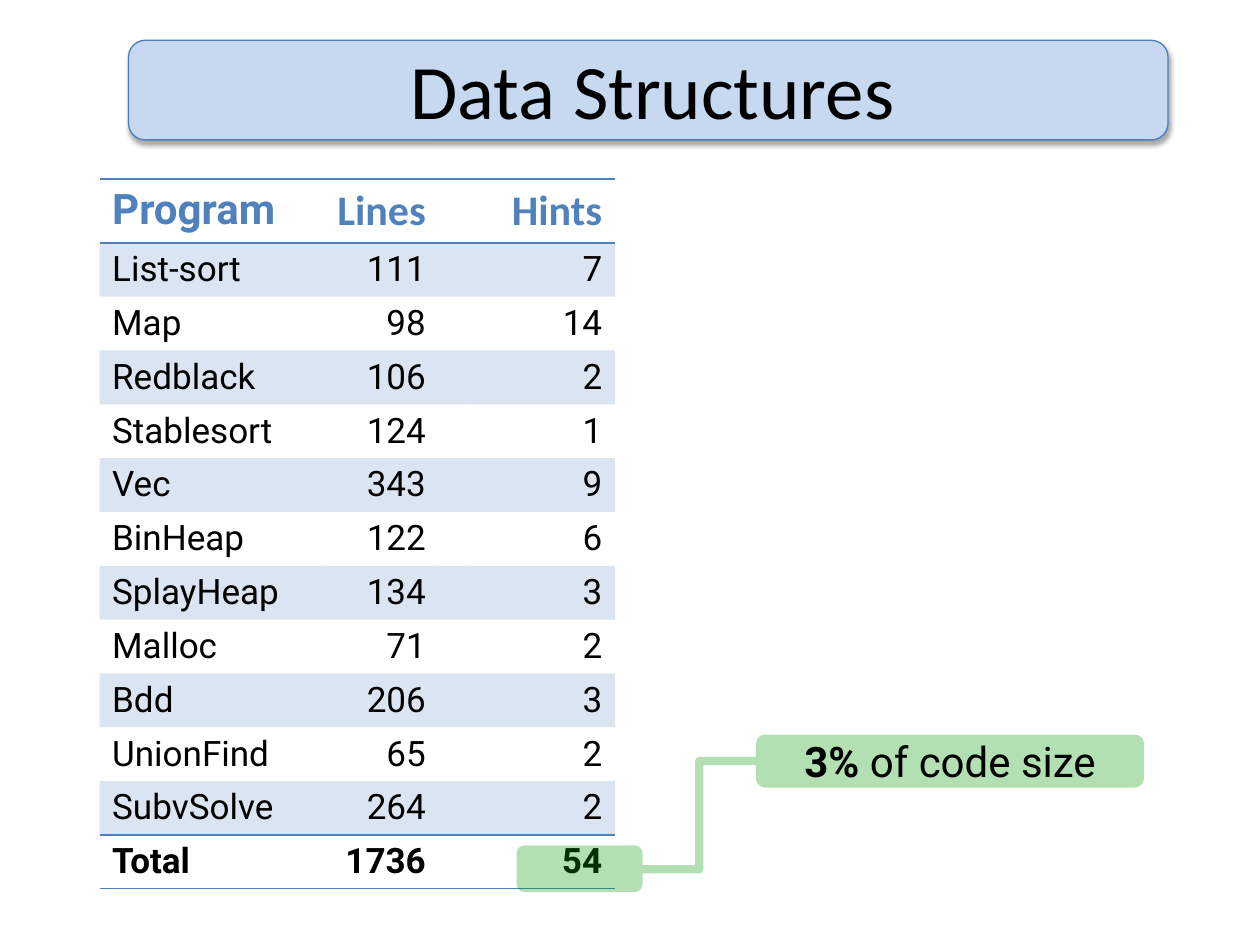
from dataclasses import dataclass

from lxml import etree
from pptx import Presentation, util as u
from pptx.dml.color import RGBColor
from pptx.enum import shapes, text
from pptx.oxml import parse_xml
from pptx.oxml.ns import nsdecls, qn


@dataclass(frozen=True)
class Theme:
    ink: str = "000000"
    accent: str = "4F81BD"
    banner: str = "C6D9F1"
    banner_line: str = "4B7EBC"
    green: str = "009900"
    heading: str = "Calibri"
    body: str = "Roboto"
    title_size: int = 44
    large: int = 24
    small: int = 20
    band_alpha: int = 20
    mark_alpha: int = 30


@dataclass(frozen=True)
class Box:
    left: float
    top: float
    width: float
    height: float

    def emu(self) -> list:
        return [u.Inches(v) for v in (self.left, self.top, self.width, self.height)]


@dataclass(frozen=True)
class Program:
    name: str
    lines: int
    hints: int


THEME = Theme()
PROGRAMS = [
    Program("List-sort", 111, 7), Program("Map", 98, 14),
    Program("Redblack", 106, 2), Program("Stablesort", 124, 1),
    Program("Vec", 343, 9), Program("BinHeap", 122, 6),
    Program("SplayHeap", 134, 3), Program("Malloc", 71, 2),
    Program("Bdd", 206, 3), Program("UnionFind", 65, 2),
    Program("SubvSolve", 264, 2),
]
TOTAL = Program("Total", 1736, 54)
COLUMNS = [1.76, 0.93, 0.23, 1.16]  # the third column is a spacer
HEADER_HEIGHT, ROW_HEIGHT = 0.5, 0.4
PLAIN_TABLE = "{2D5ABB26-0587-4C30-8999-92F81FD0307C}"


def style_run(r, size: int, color: str, font: str, bold: bool = False) -> None:
    r.font.size, r.font.name, r.font.bold = u.Pt(size), font, bold
    r.font.color.rgb = RGBColor.from_string(color)


def set_alpha(element, percent: int) -> None:
    for color in element.iter(qn("a:srgbClr")):
        etree.SubElement(color, qn("a:alpha")).set("val", str(percent * 1000))


def fill_solid(fill, color: str) -> None:
    fill.solid()
    fill.fore_color.rgb = RGBColor.from_string(color)


def add_round_rect(s, box: Box, color: str):
    sp = s.shapes.add_shape(shapes.MSO_SHAPE.ROUNDED_RECTANGLE, *box.emu())
    sp.shadow.inherit = False
    fill_solid(sp.fill, color)
    sp.line.fill.background()
    return sp


def add_mark(s, box: Box):
    sp = add_round_rect(s, box, THEME.green)
    set_alpha(sp._element.spPr, THEME.mark_alpha)
    return sp


def add_title(s, label: str) -> None:
    banner = add_round_rect(s, Box(1.02, 0.32, 8.25, 0.79), THEME.banner)
    banner.line.color.rgb = RGBColor.from_string(THEME.banner_line)
    banner.line.width = u.Pt(0.75)
    effects = banner._element.spPr.find(qn("a:effectLst"))
    effects.append(parse_xml(
        f'<a:outerShdw {nsdecls("a")} blurRad="{u.Pt(3.1)}" dist="{u.Pt(1.8)}"'
        ' dir="5400000" rotWithShape="0"><a:srgbClr val="000000">'
        '<a:alpha val="35000"/></a:srgbClr></a:outerShdw>'))

    title = s.shapes.title
    title.left, title.top, title.width, title.height = Box(0.68, 0.08, 9, 1.25).emu()
    banner._element.addnext(title._element)  # title in front of its banner
    tf = title.text_frame
    tf.text = label
    tf.vertical_anchor = text.MSO_ANCHOR.MIDDLE
    p = tf.paragraphs[0]
    p.alignment = text.PP_ALIGN.CENTER
    style_run(p.runs[0], THEME.title_size, THEME.ink, THEME.heading)


def rule_cell(cell) -> None:
    """Draw rules above and below a cell."""
    tc_pr = cell._tc.get_or_add_tcPr()
    for i, side in enumerate(("lnT", "lnB")):
        tc_pr.insert(i, parse_xml(
            f'<a:{side} {nsdecls("a")} w="{u.Pt(1)}"><a:solidFill>'
            f'<a:srgbClr val="{THEME.accent}"/></a:solidFill></a:{side}>'))


def fill_row(row, values: list, size: int, color: str, fonts: list,
             bold: bool = False, banded: bool = False, ruled: bool = False) -> None:
    for i, (cell, value, font) in enumerate(zip(row.cells, values, fonts)):
        if value != "":
            cell.text = str(value)
            p = cell.text_frame.paragraphs[0]
            p.alignment = text.PP_ALIGN.RIGHT if i else text.PP_ALIGN.LEFT
            style_run(p.runs[0], size, color, font, bold)
        if banded:
            fill_solid(cell.fill, THEME.accent)
            set_alpha(cell._tc.tcPr, THEME.band_alpha)
        else:
            cell.fill.background()
        if ruled:
            rule_cell(cell)


def add_program_table(s) -> None:
    count = len(PROGRAMS) + 2
    box = Box(0.79, 1.42, sum(COLUMNS), HEADER_HEIGHT + ROW_HEIGHT * (count - 1))
    table = s.shapes.add_table(count, len(COLUMNS), *box.emu()).table
    table.first_row = table.horz_banding = False
    table._tbl.tblPr.find(qn("a:tableStyleId")).text = PLAIN_TABLE
    for column, width in zip(table.columns, COLUMNS):
        column.width = u.Inches(width)
    for i, row in enumerate(table.rows):
        row.height = u.Inches(ROW_HEIGHT if i else HEADER_HEIGHT)

    fill_row(table.rows[0], ["Program", "Lines", "", "Hints"], THEME.large, THEME.accent,
             [THEME.body] + [THEME.heading] * 3, bold=True, ruled=True)
    for i, item in enumerate(PROGRAMS + [TOTAL], start=1):
        is_total = item is TOTAL
        fill_row(table.rows[i], [item.name, item.lines, "", item.hints],
                 THEME.small, THEME.ink, [THEME.body] * 4, bold=is_total,
                 banded=i % 2 == 1 and not is_total, ruled=is_total)


def add_callout(s) -> None:
    # Elbow line from the hint total to its note
    ends = [u.Inches(v) for v in (5.1, 6.9, 6, 6.04)]
    line = s.shapes.add_connector(shapes.MSO_CONNECTOR.ELBOW, *ends)
    line.line.width = u.Pt(4.75)
    line.line.color.rgb = RGBColor.from_string(THEME.green)
    sp_pr = line._element.spPr
    set_alpha(sp_pr, THEME.mark_alpha)
    etree.SubElement(sp_pr, qn("a:effectLst"))

    # Note with a bold figure
    tf = add_mark(s, Box(6, 5.83, 3.08, 0.42)).text_frame
    tf.word_wrap = False
    tf.vertical_anchor = text.MSO_ANCHOR.MIDDLE
    p = tf.paragraphs[0]
    p.alignment = text.PP_ALIGN.CENTER
    for words, bold in (("3% ", True), ("of code size", False)):
        r = p.add_run()
        r.text = words
        style_run(r, THEME.large, THEME.ink, THEME.body, bold)

    # Highlight over the hint total
    add_mark(s, Box(4.1, 6.71, 1, 0.37))


def main() -> None:
    prs = Presentation()
    prs.slide_width, prs.slide_height = u.Inches(10), u.Inches(7.5)
    s = prs.slides.add_slide(prs.slide_layouts[5])
    add_title(s, "Data Structures")
    add_program_table(s)
    add_callout(s)
    prs.save("out.pptx")


if __name__ == "__main__":
    main()
